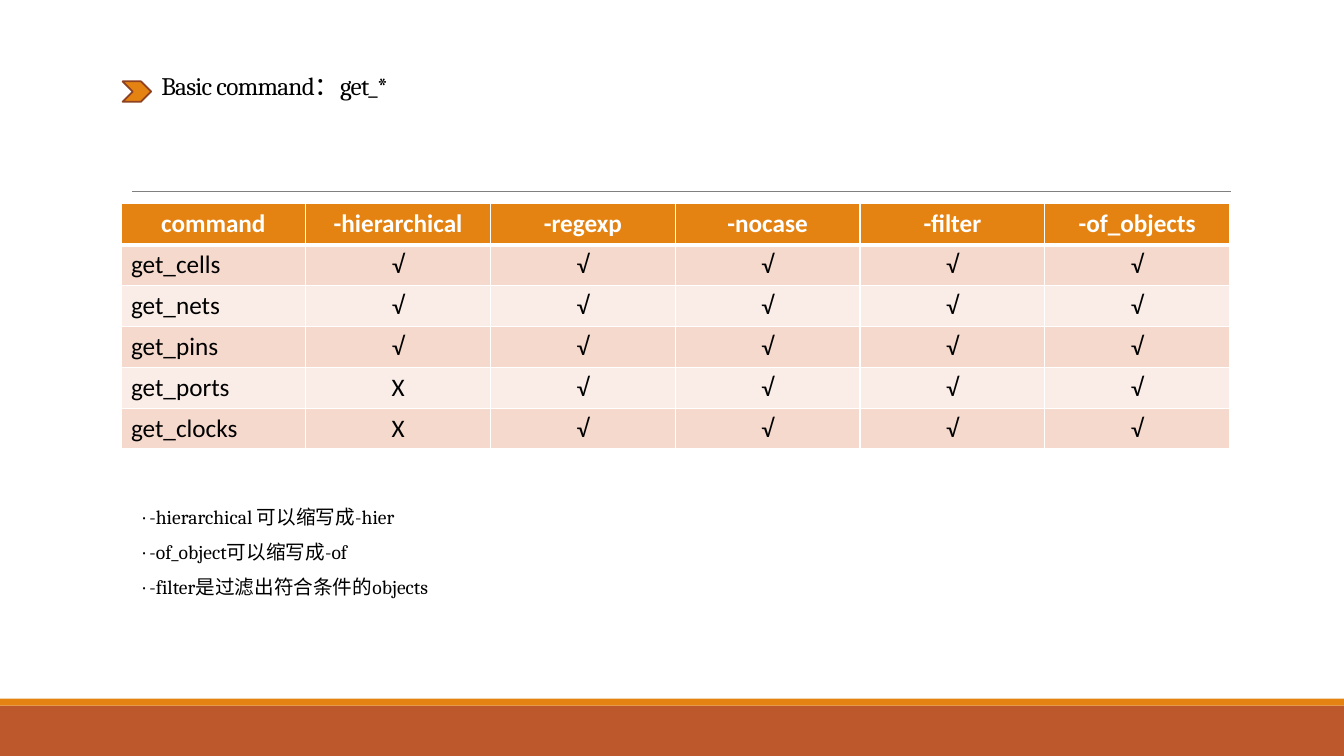
import pptx
import pptx.util
import pptx.dml.color
import pptx.enum.shapes
import pptx.enum.text
import pptx.oxml.ns
import lxml.etree

Pt = pptx.util.Pt
ALIGN = pptx.enum.text.PP_ALIGN
ANCHOR = pptx.enum.text.MSO_ANCHOR
SHAPE = pptx.enum.shapes.MSO_SHAPE

# Content
TITLE = "Basic command：get_*"
OPTIONS = ["-hierarchical", "-regexp", "-nocase", "-filter", "-of_objects"]
SUPPORT = {
    "get_cells": "√√√√√",
    "get_nets": "√√√√√",
    "get_pins": "√√√√√",
    "get_ports": "X√√√√",
    "get_clocks": "X√√√√",
}
NOTES = [
    "· -hierarchical 可以缩写成-hier",
    "· -of_object可以缩写成-of",
    "· -filter是过滤出符合条件的objects",
]

THEME = {
    "orange": "E48312", "rust": "BD582C", "brown": "8E4221", "gray": "808080",
    "white": "FFFFFF", "black": "000000", "bands": ["F5D9CC", "FAEDE7"],
    "serif": "Cambria", "sans": "Calibri", "large": 18, "small": 14,
}

# Layout, in points
SLIDE_WIDTH, SLIDE_HEIGHT = 960, 540
FOOTER_TOP, STRIPE_HEIGHT = 504, 5
TABLE_LEFT, TABLE_TOP, TABLE_WIDTH, ROW_HEIGHT = 86.4, 145.6, 792, 29.2


def color(name):
    return pptx.dml.color.RGBColor.from_string(THEME.get(name, name))


def write(frame, lines, font="serif", size="large", ink="black", bold=False,
          align=ALIGN.LEFT, line_spacing=1.0, letter_spacing=0):
    """Fill a text frame with one paragraph per line."""
    for index, line in enumerate(lines):
        para = frame.paragraphs[0] if index == 0 else frame.add_paragraph()
        para.alignment, para.line_spacing = align, line_spacing
        para.space_before = para.space_after = Pt(0)
        span = para.add_run()
        span.text = line
        span.font.name, span.font.size = THEME[font], Pt(THEME[size])
        span.font.bold, span.font.color.rgb = bold, color(ink)
        if letter_spacing:
            span.font._element.set("spc", str(round(letter_spacing * 100)))


def place(item, left, top, width, height):
    item.left, item.top, item.width, item.height = map(Pt, (left, top, width, height))


def add_block(page, kind, left, top, width, height, fill, outline=None):
    block = page.shapes.add_shape(kind, Pt(left), Pt(top), Pt(width), Pt(height))
    block.shadow.inherit = False
    block.fill.solid()
    block.fill.fore_color.rgb = color(fill)
    if outline:
        block.line.color.rgb, block.line.width = color(outline), Pt(1.25)
    else:
        block.line.fill.background()


def add_child(parent, tag, **attributes):
    return lxml.etree.SubElement(parent, pptx.oxml.ns.qn(tag), attributes)


def style_cell(cell, fill, top=1, bottom=1):
    """Set white borders, then the fill that must follow them."""
    properties = cell._tc.get_or_add_tcPr()
    for side, width in (("L", 1), ("R", 1), ("T", top), ("B", bottom)):
        border = add_child(properties, f"a:ln{side}", w=str(Pt(width)))
        add_child(add_child(border, "a:solidFill"), "a:srgbClr", val=THEME["white"])
    cell.fill.solid()
    cell.fill.fore_color.rgb = color(fill)


def add_support_table(page):
    rows = [["command", *OPTIONS]] + [[name, *marks] for name, marks in SUPPORT.items()]
    table = page.shapes.add_table(
        len(rows), len(rows[0]), Pt(TABLE_LEFT), Pt(TABLE_TOP),
        Pt(TABLE_WIDTH), Pt(ROW_HEIGHT * len(rows))).table
    for column in table.columns:
        column.width = Pt(TABLE_WIDTH / len(rows[0]))
    for r, values in enumerate(rows):
        table.rows[r].height = Pt(ROW_HEIGHT)
        header = r == 0
        for c, value in enumerate(values):
            cell = table.cell(r, c)
            style_cell(cell, "orange" if header else THEME["bands"][(r - 1) % 2],
                       top=3 if r == 1 else 1, bottom=3 if header else 1)
            write(cell.text_frame, [value], font="sans", bold=header,
                  ink="white" if header else "black",
                  align=ALIGN.CENTER if header or c else ALIGN.LEFT)


def main():
    deck = pptx.Presentation()
    deck.slide_width, deck.slide_height = Pt(SLIDE_WIDTH), Pt(SLIDE_HEIGHT)
    page = deck.slides.add_slide(deck.slide_layouts[1])
    title, notes = page.shapes.title, page.placeholders[1]

    # Footer bands
    add_block(page, SHAPE.RECTANGLE, 0, FOOTER_TOP, SLIDE_WIDTH,
              SLIDE_HEIGHT - FOOTER_TOP, "rust")
    add_block(page, SHAPE.RECTANGLE, 0, FOOTER_TOP - STRIPE_HEIGHT, SLIDE_WIDTH,
              STRIPE_HEIGHT, "orange")

    # Rule under the title
    rule = page.shapes.add_connector(
        pptx.enum.shapes.MSO_CONNECTOR.STRAIGHT, Pt(94.3), Pt(136.8), Pt(879), Pt(136.8))
    rule.line.color.rgb, rule.line.width = color("gray"), Pt(0.5)
    add_child(rule._element.spPr, "a:effectLst")

    # Title with its marker
    place(title, 108, 54.7, 775.4, 20.9)
    title.text_frame.auto_size = pptx.enum.text.MSO_AUTO_SIZE.NONE
    title.text_frame.vertical_anchor = ANCHOR.BOTTOM
    write(title.text_frame, [TITLE], line_spacing=0.85, letter_spacing=-0.5)
    add_block(page, SHAPE.CHEVRON, 87.6, 58.1, 20.4, 14.6, "orange", outline="brown")

    # Option table
    add_support_table(page)

    # Notes
    place(notes, 95, 348.5, 685.4, 80.6)
    notes.text_frame.auto_size = pptx.enum.text.MSO_AUTO_SIZE.NONE
    notes.text_frame.vertical_anchor = ANCHOR.TOP
    write(notes.text_frame, NOTES, size="small", line_spacing=1.5)
    for para in notes.text_frame.paragraphs:
        properties = para._p.get_or_add_pPr()
        properties.set("marL", "0")
        properties.set("indent", "0")
        add_child(properties, "a:buNone")

    deck.save("out.pptx")


if __name__ == "__main__":
    main()
